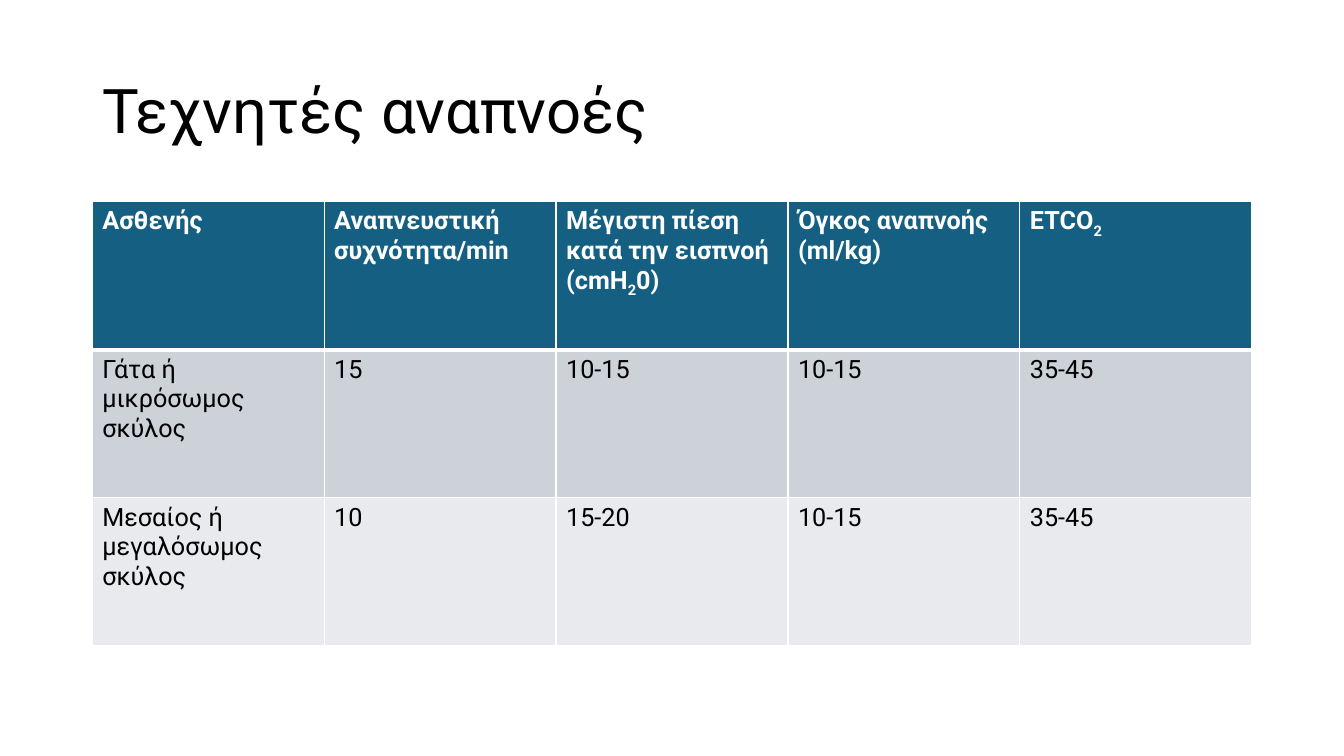
from lxml.etree import SubElement
from pptx import Presentation
from pptx.dml.color import RGBColor
from pptx.enum.text import MSO_ANCHOR, MSO_AUTO_SIZE, PP_ALIGN
from pptx.oxml.ns import qn
from pptx.util import Inches, Pt

THEME = {
    "font": "Roboto", "title_size": 44, "cell_size": 18,
    "text": "000000", "header_text": "FFFFFF", "border": "FFFFFF",
    "row_fills": ["156082", "CCD2D8", "E8EAED"],
}

# Text between bars is subscript
ROWS = [
    ["Ασθενής", "Αναπνευστική συχνότητα/min",
     "Μέγιστη πίεση κατά την εισπνοή (cmH|2|0)", "Όγκος αναπνοής (ml/kg)", "ETCO|2|"],
    ["Γάτα ή μικρόσωμος σκύλος", "15", "10-15", "10-15", "35-45"],
    ["Μεσαίος ή μεγαλόσωμος σκύλος", "10", "15-20", "10-15", "35-45"],
]


def style_run(r, size, color, bold=False):
    r.font.name = THEME["font"]
    r.font.size = Pt(size)
    r.font.bold = bold
    r.font.color.rgb = RGBColor.from_string(color)


def add_border(cell, side, width):
    ln = SubElement(cell._tc.get_or_add_tcPr(), qn(f"a:ln{side}"), w=str(Pt(width)))
    fill = SubElement(ln, qn("a:solidFill"))
    SubElement(fill, qn("a:srgbClr"), val=THEME["border"])


prs = Presentation()
prs.slide_width, prs.slide_height = Inches(13.33), Inches(7.5)
s = prs.slides.add_slide(prs.slide_layouts[5])

# Grid: five equal columns centred on the slide
col_w, row_h = Inches(2.3), Inches(1.47)
grid_w = col_w * len(ROWS[0])
left = (prs.slide_width - grid_w) // 2

# Title
title = s.shapes.title
title.left, title.top, title.width, title.height = left, Inches(0.4), grid_w, Inches(1.45)
tf = title.text_frame
tf.text = "Τεχνητές αναπνοές"
tf.word_wrap = True
tf.auto_size = MSO_AUTO_SIZE.NONE
tf.vertical_anchor = MSO_ANCHOR.MIDDLE
p = tf.paragraphs[0]
p.alignment = PP_ALIGN.LEFT
p.line_spacing = 0.9
style_run(p.runs[0], THEME["title_size"], THEME["text"])

# Ventilation table
table = s.shapes.add_table(len(ROWS), len(ROWS[0]), left, Inches(2),
                           grid_w, row_h * len(ROWS)).table
for col in table.columns:
    col.width = col_w
for i, values in enumerate(ROWS):
    table.rows[i].height = row_h
    header = i == 0
    color = THEME["header_text"] if header else THEME["text"]
    for j, value in enumerate(values):
        cell = table.cell(i, j)
        # Borders, with a heavier rule under the header
        for side in "LRTB":
            heavy = (header and side == "B") or (i == 1 and side == "T")
            add_border(cell, side, 3 if heavy else 1)
        cell.fill.solid()
        cell.fill.fore_color.rgb = RGBColor.from_string(THEME["row_fills"][i])
        # Cell text
        p = cell.text_frame.paragraphs[0]
        for k, part in enumerate(value.split("|")):
            if part:
                r = p.add_run()
                r.text = part
                style_run(r, THEME["cell_size"], color, header)
                if k % 2:
                    r.font._element.set("baseline", "-25000")

prs.save("out.pptx")
